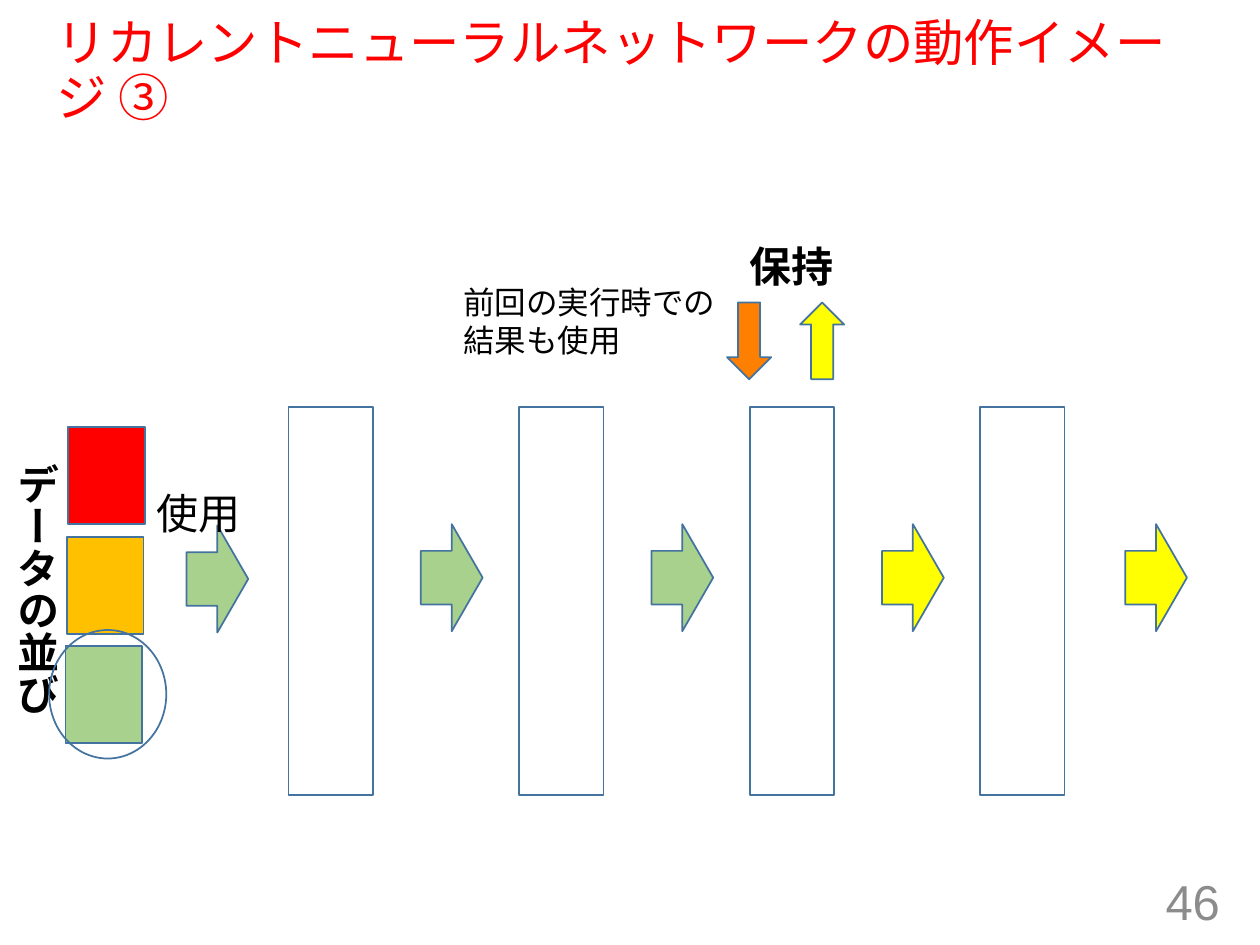
"""Build the slide on how a recurrent neural network runs, step 3."""
import pptx
import pptx.dml.color
import pptx.enum.shapes
import pptx.enum.text
import pptx.util

RGB = pptx.dml.color.RGBColor
SHAPE = pptx.enum.shapes.MSO_SHAPE
ALIGN = pptx.enum.text.PP_ALIGN
ANCHOR = pptx.enum.text.MSO_ANCHOR
AUTO = pptx.enum.text.MSO_AUTO_SIZE

RED = RGB(0xFF, 0x00, 0x00)
AMBER = RGB(0xFF, 0xC0, 0x00)
GREEN = RGB(0xA9, 0xD1, 0x8E)
YELLOW = RGB(0xFF, 0xFF, 0x01)
ORANGE = RGB(0xFF, 0x80, 0x01)
OUTLINE = RGB(0x43, 0x73, 0x9E)
BLACK = RGB(0x00, 0x00, 0x00)
GRAY = RGB(0x8C, 0x8C, 0x8C)

CELL = pptx.util.Inches(0.1)
COLUMNS, ROWS = 100, 75
PITCH = 18.3


def cells(*counts):
    """Turn counts of grid cells into lengths."""
    return [round(n * CELL) for n in counts]


def style_text(tf, size, color, font="Calibri", bold=False):
    """Format every run of a text frame."""
    for p in tf.paragraphs:
        for r in p.runs:
            r.font.size = pptx.util.Pt(size)
            r.font.name = font
            r.font.bold = bold
            r.font.color.rgb = color


def add_part(s, kind, box, fill=None, rotation=0):
    """Add an outlined shape, hollow unless a fill is given."""
    sp = s.shapes.add_shape(kind, *cells(*box))
    sp.shadow.inherit = False
    sp.rotation = rotation
    sp.line.color.rgb = OUTLINE
    sp.line.width = pptx.util.Pt(1)
    if fill is None:
        sp.fill.background()
    else:
        sp.fill.solid()
        sp.fill.fore_color.rgb = fill


def add_label(s, box, text, size=24, bold=False):
    """Add an unwrapped label and return its text frame."""
    tf = s.shapes.add_textbox(*cells(*box)).text_frame
    tf.text = text
    tf.word_wrap = False
    tf.auto_size = AUTO.SHAPE_TO_FIT_TEXT
    style_text(tf, size, BLACK, bold=bold)
    return tf


def add_title(s, box, text):
    """Fill the title placeholder."""
    sp = s.shapes.title
    sp.left, sp.top, sp.width, sp.height = cells(*box)
    tf = sp.text_frame
    tf.text = text
    tf.auto_size = AUTO.NONE
    tf.vertical_anchor = ANCHOR.MIDDLE
    p = tf.paragraphs[0]
    p.alignment = ALIGN.LEFT
    p.line_spacing = 0.9
    style_text(tf, 28.8, RED, "Arial")


def add_page_number(s, box, number):
    """Add the page number, aligned right."""
    tf = s.shapes.add_textbox(*cells(*box)).text_frame
    tf.text = str(number)
    tf.word_wrap = True
    tf.vertical_anchor = ANCHOR.MIDDLE
    tf.paragraphs[0].alignment = ALIGN.RIGHT
    style_text(tf, 28, GRAY, "Arial")


def add_layers(s, box):
    """Add four layers with an arrow into each and one out of the last."""
    left, top, width, height = box
    for i in range(4):
        add_part(s, SHAPE.RECTANGLE, (left + i * PITCH, top, width, height))
    arrows = [(-8.1, 9.4, GREEN), (10.5, 9.3, GREEN), (10.5 + PITCH, 9.3, GREEN),
              (10.5 + 2 * PITCH, 9.3, YELLOW), (66.4, 9.3, YELLOW)]
    for x, y, fill in arrows:
        add_part(s, SHAPE.RIGHT_ARROW, (left + x, top + y, 4.9, 8.5), fill)


def add_data_stack(s, box):
    """Add the data sequence with its vertical label and the item in use."""
    left, top, width, height = box
    for i, fill in enumerate((RED, AMBER, GREEN)):
        add_part(s, SHAPE.RECTANGLE,
                 (left - i * 0.1, top + i * 8.7, width, height), fill)
    tf = add_label(s, (left - 6.1, top + 1.9, 6.1, 21.2), "データの並び", bold=True)
    tf._txBody.bodyPr.set("vert", "eaVert")
    add_part(s, SHAPE.OVAL, (left - 1.5, top + 16.1, 9.3, 10.2))
    add_label(s, (left + 6, top + 4.3, 8.8, 5), "使用")


def add_memory(s, box):
    """Add the held state with its arrows into and out of the layer."""
    left, top, width, height = box
    add_label(s, (left + 22.7, top, 8.8, 5), "保持", bold=True)
    for x, fill, rotation in ((20.6, ORANGE, 90), (26.4, YELLOW, 270)):
        add_part(s, SHAPE.RIGHT_ARROW,
                 (left + x, top + 6.7, 6.1, 3.5), fill, rotation)
    add_label(s, (left, top + 3.4, width, height),
              "前回の実行時での\n結果も使用", 18)


def main():
    """Build and save the presentation."""
    prs = pptx.Presentation()
    prs.slide_width, prs.slide_height = cells(COLUMNS, ROWS)
    s = prs.slides.add_slide(prs.slide_layouts[5])
    add_title(s, (3.5, 1.9, 92.5, 7.7), "リカレントニューラルネットワークの動作イメージ ③")
    add_page_number(s, (75.3, 69.5, 22.5, 4), 46)
    add_layers(s, (22.9, 32.3, 6.7, 30.8))
    add_data_stack(s, (5.4, 33.9, 6.1, 7.7))
    add_memory(s, (35.8, 18.6, 22.2, 7.1))
    prs.save("out.pptx")


if __name__ == "__main__":
    main()
